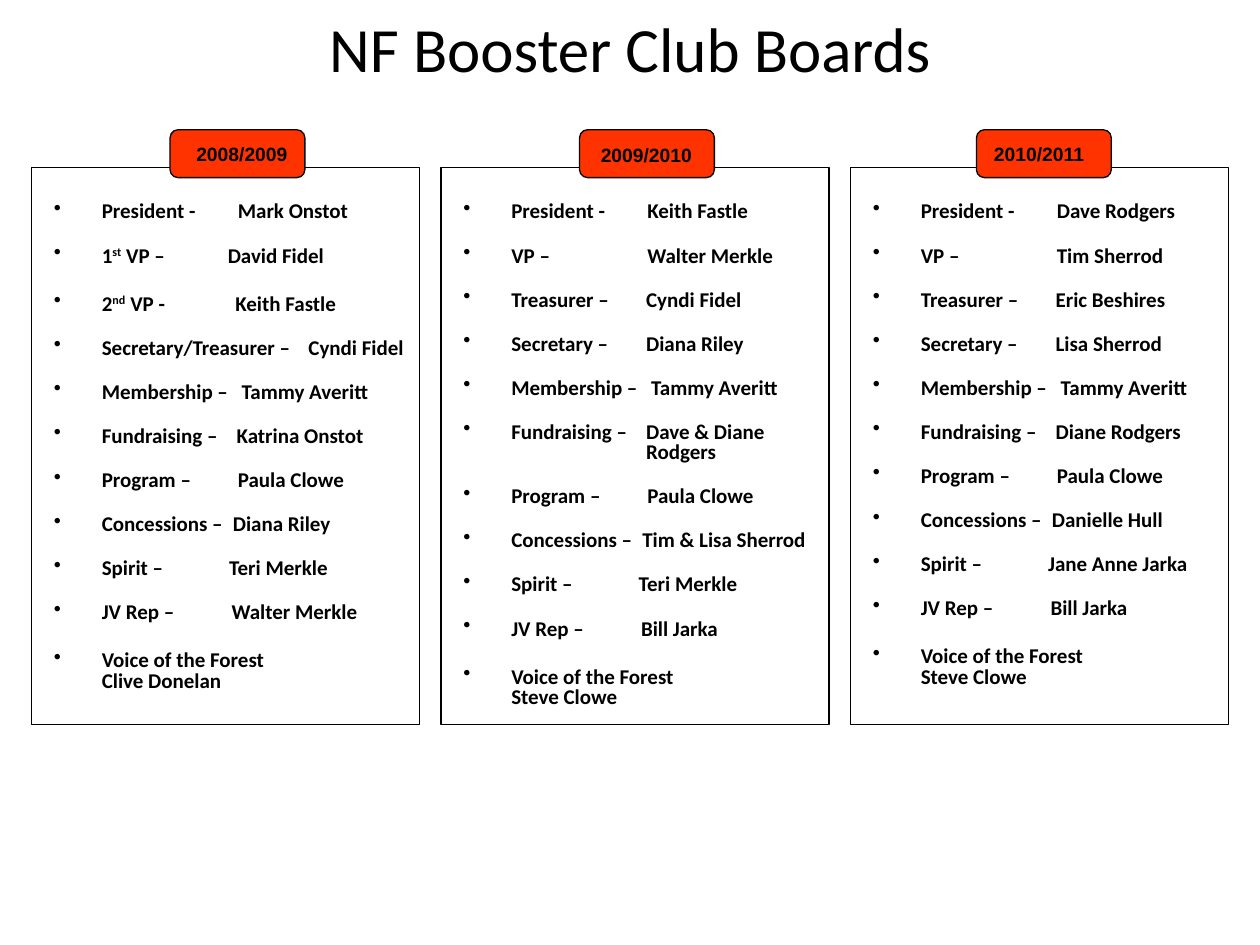
from lxml import etree
from pptx import Presentation
from pptx.dml.color import RGBColor
from pptx.enum import shapes, text
from pptx.oxml import ns
from pptx.util import Inches, Pt

COLORS = {"ink": "000000", "badge": "FF3300"}
TAB_STOPS = {
    "President -": 1.46, "VP –": 1.46, "1^st^ VP –": 1.38, "2^nd^ VP -": 1.44,
    "Treasurer –": 1.45, "Secretary –": 1.45, "Secretary/Treasurer –": 2.02,
    "Membership –": 1.49, "Fundraising –": 1.45, "Program –": 1.46,
    "Concessions –": 1.42, "Spirit –": 1.39, "JV Rep –": 1.41,
}
BOARDS = [
    {"year": "2008/2009", "frame": (0.25, 3.08), "list": 0.33, "badge": 1.35, "label": (1.46, 1.08),
     "members": [
         ("President -", "Mark Onstot"), ("1^st^ VP –", "David Fidel"),
         ("2^nd^ VP -", "Keith Fastle"), ("Secretary/Treasurer –", "Cyndi Fidel"),
         ("Membership –", "Tammy Averitt"), ("Fundraising –", "Katrina Onstot"),
         ("Program –", "Paula Clowe"), ("Concessions –", "Diana Riley"),
         ("Spirit –", "Teri Merkle"), ("JV Rep –", "Walter Merkle"),
         ("Voice of the Forest", "Clive Donelan")]},
    {"year": "2009/2010", "frame": (3.5, 3.08), "list": 3.58, "badge": 4.6, "label": (4.67, 1.09),
     "members": [
         ("President -", "Keith Fastle"), ("VP –", "Walter Merkle"),
         ("Treasurer –", "Cyndi Fidel"), ("Secretary –", "Diana Riley"),
         ("Membership –", "Tammy Averitt"), ("Fundraising –", "Dave & Diane\n\tRodgers"),
         ("Program –", "Paula Clowe"), ("Concessions –", "Tim & Lisa Sherrod"),
         ("Spirit –", "Teri Merkle"), ("JV Rep –", "Bill Jarka"),
         ("Voice of the Forest", "Steve Clowe")]},
    {"year": "2010/2011", "frame": (6.75, 3), "list": 6.83, "badge": 7.75, "label": (7.79, 1.08),
     "members": [
         ("President -", "Dave Rodgers"), ("VP –", "Tim Sherrod"),
         ("Treasurer –", "Eric Beshires"), ("Secretary –", "Lisa Sherrod"),
         ("Membership –", "Tammy Averitt"), ("Fundraising –", "Diane Rodgers"),
         ("Program –", "Paula Clowe"), ("Concessions –", "Danielle Hull"),
         ("Spirit –", "Jane Anne Jarka"), ("JV Rep –", "Bill Jarka"),
         ("Voice of the Forest", "Steve Clowe")]},
]

presentation = Presentation()
presentation.slide_width, presentation.slide_height = Inches(10), Inches(7.5)
slide = presentation.slides.add_slide(presentation.slide_layouts[6])


def add_panel(kind, left, top, width, height, fill=None):
    shape = slide.shapes.add_shape(kind, Inches(left), Inches(top), Inches(width), Inches(height))
    shape.shadow.inherit = False
    if fill:
        shape.fill.solid()
        shape.fill.fore_color.rgb = RGBColor.from_string(COLORS[fill])
    else:
        shape.fill.background()
    shape.line.color.rgb = RGBColor.from_string(COLORS["ink"])
    shape.line.width = Pt(0.75)


def add_text(left, top, width, height, lines, font, size, bold=True):
    box = slide.shapes.add_textbox(Inches(left), Inches(top), Inches(width), Inches(height))
    frame = box.text_frame
    frame.word_wrap = True
    for index, line in enumerate(lines):
        paragraph = frame.paragraphs[0] if index == 0 else frame.add_paragraph()
        paragraph.font.name, paragraph.font.size, paragraph.font.bold = font, Pt(size), bold
        paragraph.font.color.rgb = RGBColor.from_string(COLORS["ink"])
        for part, piece in enumerate(line.split("^")):
            for row, words in enumerate(piece.split("\n")):
                if row:
                    paragraph.add_line_break()
                run = paragraph.add_run()
                run.text = words
                if part % 2:
                    run.font._element.set("baseline", "30000")
    return frame


title = add_text(0.5, -0.25, 9, 1.25, ["NF Booster Club Boards"], "Calibri", 36, False)
title.vertical_anchor = text.MSO_ANCHOR.MIDDLE
title.paragraphs[0].alignment = text.PP_ALIGN.CENTER

for board in BOARDS:
    left, width = board["frame"]
    add_panel(shapes.MSO_SHAPE.RECTANGLE, left, 1.33, width, 4.42)
    add_panel(shapes.MSO_SHAPE.ROUNDED_RECTANGLE, board["badge"], 1.03, 1.07, 0.38, "badge")
    add_text(*board["label"], 0.96, 0.29, [board["year"]], "Arial", 11)

    lines = [role + ("\t" if role in TAB_STOPS else "\n") + name for role, name in board["members"]]
    frame = add_text(board["list"], 1.33, 4.67, 6.08, lines, "Calibri", 12)
    frame.margin_top = Inches(0.28)
    for index, (paragraph, (role, name)) in enumerate(zip(frame.paragraphs, board["members"])):
        wide_gap = role in ("2^nd^ VP -", "Voice of the Forest")
        paragraph.line_spacing = 0.8
        paragraph.space_before = Pt(0 if index == 0 else 16 if wide_gap else 13.7)
        properties = paragraph._p.get_or_add_pPr()
        properties.set("marL", str(Inches(0.38)))
        properties.set("indent", str(-Inches(0.38)))
        bullet = etree.Element(ns.qn("a:buChar"), char="•")
        properties.insert_element_before(bullet, "a:tabLst", "a:defRPr")
        if role in TAB_STOPS:
            tabs = etree.Element(ns.qn("a:tabLst"))
            etree.SubElement(tabs, ns.qn("a:tab"), pos=str(Inches(TAB_STOPS[role])), algn="l")
            properties.insert_element_before(tabs, "a:defRPr")

presentation.save("out.pptx")
